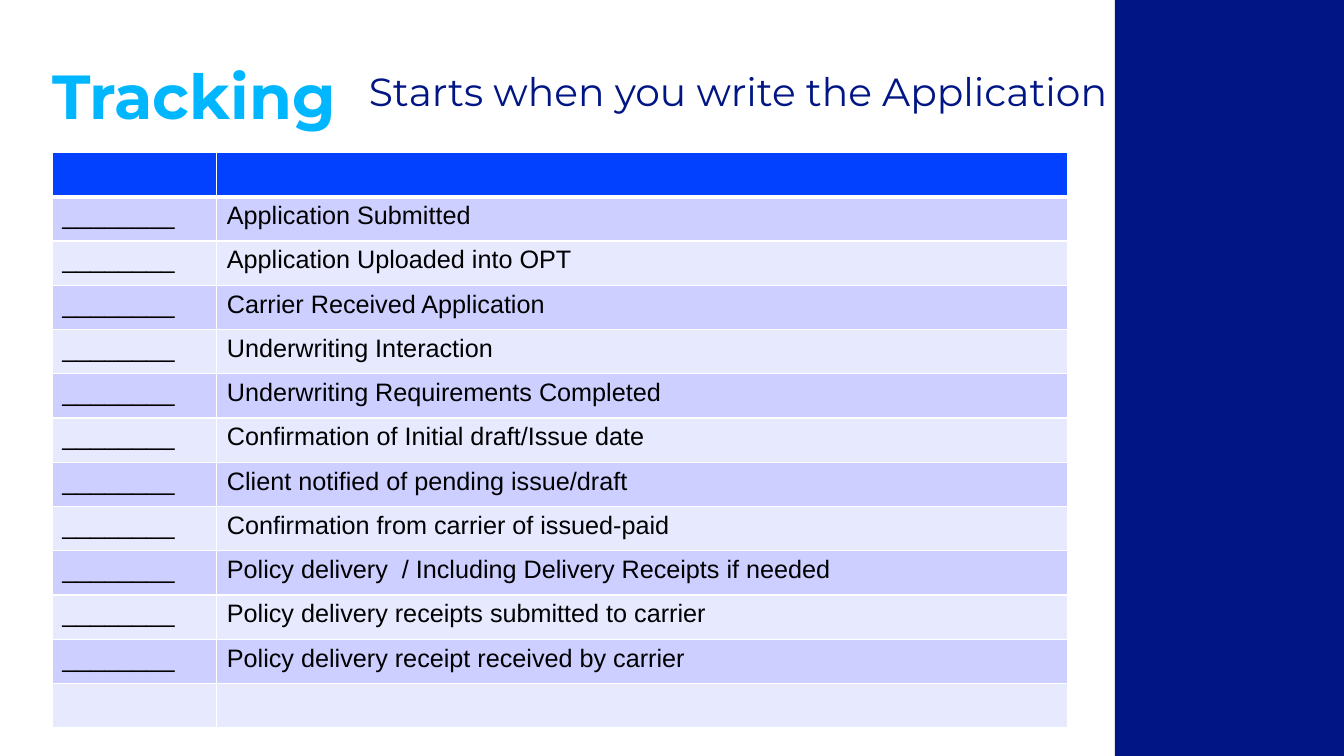
"""Build the application tracking checklist slide."""
from dataclasses import dataclass

from lxml import etree
from pptx import Presentation
from pptx.dml.color import RGBColor
from pptx.enum.shapes import MSO_SHAPE
from pptx.enum.text import MSO_ANCHOR
from pptx.oxml.ns import qn
from pptx.util import Pt

RECTANGLE = MSO_SHAPE.RECTANGLE
TOP, BOTTOM = MSO_ANCHOR.TOP, MSO_ANCHOR.BOTTOM


@dataclass(frozen=True)
class Theme:
    navy: str = "011684"
    sky: str = "00B7FF"
    header: str = "0141FF"
    bands: tuple = ("CCCFFF", "E7E9FF")
    rule: str = "FFFFFF"
    ink: str = "000000"
    heading_font: str = "Montserrat"
    body_font: str = "Arial"
    title_size: float = 44.4
    subtitle_size: float = 28
    cell_size: float = 18


THEME = Theme()
BLANK_LINE = "________"
STEPS = [
    "Application Submitted",
    "Application Uploaded into OPT",
    "Carrier Received Application",
    "Underwriting Interaction",
    "Underwriting Requirements Completed",
    "Confirmation of Initial draft/Issue date",
    "Client notified of pending issue/draft",
    "Confirmation from carrier of issued-paid",
    "Policy delivery  / Including Delivery Receipts if needed",
    "Policy delivery receipts submitted to carrier",
    "Policy delivery receipt received by carrier",
]
COLUMN_WIDTHS = (117.5, 607.5)
ROW_HEIGHT = 31.62


def style(p, font, size, color, bold=False):
    p.font.size = Pt(size)
    for r in p.runs:
        r.font.name = font
        r.font.size = Pt(size)
        r.font.bold = bold
        r.font.color.rgb = RGBColor.from_string(color)


def add_panel(s, left, top, width, height, color):
    sp = s.shapes.add_shape(RECTANGLE, Pt(left), Pt(top), Pt(width), Pt(height))
    sp.shadow.inherit = False
    sp.fill.solid()
    sp.fill.fore_color.rgb = RGBColor.from_string(color)
    sp.line.fill.background()


def add_heading(s, box, text, size, color, anchor, spacing=1.0, bold=False):
    tf = s.shapes.add_textbox(*map(Pt, box)).text_frame
    tf.word_wrap = True
    tf.vertical_anchor = anchor
    tf.margin_left = tf.margin_right = tf.margin_top = tf.margin_bottom = 0
    tf.text = text
    p = tf.paragraphs[0]
    p.line_spacing = spacing
    style(p, THEME.heading_font, size, color, bold)


def set_borders(cell, widths):
    tcPr = cell._tc.get_or_add_tcPr()
    for i, (side, width) in enumerate(widths.items()):
        ln = etree.Element(qn(f"a:ln{side}"), w=str(Pt(width)))
        fill = etree.SubElement(ln, qn("a:solidFill"))
        etree.SubElement(fill, qn("a:srgbClr"), val=THEME.rule)
        tcPr.insert(i, ln)


def add_checklist(s, left, top, rows):
    table = s.shapes.add_table(
        len(rows), len(COLUMN_WIDTHS), Pt(left), Pt(top),
        Pt(sum(COLUMN_WIDTHS)), Pt(ROW_HEIGHT * len(rows))).table
    for column, width in zip(table.columns, COLUMN_WIDTHS):
        column.width = Pt(width)
    for i, texts in enumerate(rows):
        table.rows[i].height = Pt(ROW_HEIGHT)
        color = THEME.bands[(i - 1) % 2] if i else THEME.header
        for j, text in enumerate(texts):
            cell = table.cell(i, j)
            cell.fill.solid()
            cell.fill.fore_color.rgb = RGBColor.from_string(color)
            set_borders(cell, {"L": 1, "R": 1, "T": 3 if i == 1 else 1,
                               "B": 1 if i else 3})
            cell.text = text
            style(cell.text_frame.paragraphs[0], THEME.body_font,
                  THEME.cell_size, THEME.ink)


def main():
    prs = Presentation()
    prs.slide_width, prs.slide_height = Pt(960), Pt(540)
    s = prs.slides.add_slide(prs.slide_layouts[6])
    add_panel(s, 796.3, 0, 163.7, 540, THEME.navy)
    add_heading(s, (263.5, 51.8, 538.6, 40.3),
                "Starts when you write the Application",
                THEME.subtitle_size, THEME.navy, TOP, spacing=0.9)
    rows = [("", ""), *((BLANK_LINE, step) for step in STEPS), ("", "")]
    add_checklist(s, 37.4, 108.9, rows)
    add_heading(s, (37.4, 22, 225.4, 72), "Tracking",
                THEME.title_size, THEME.sky, BOTTOM, bold=True)
    prs.save("out.pptx")


if __name__ == "__main__":
    main()
